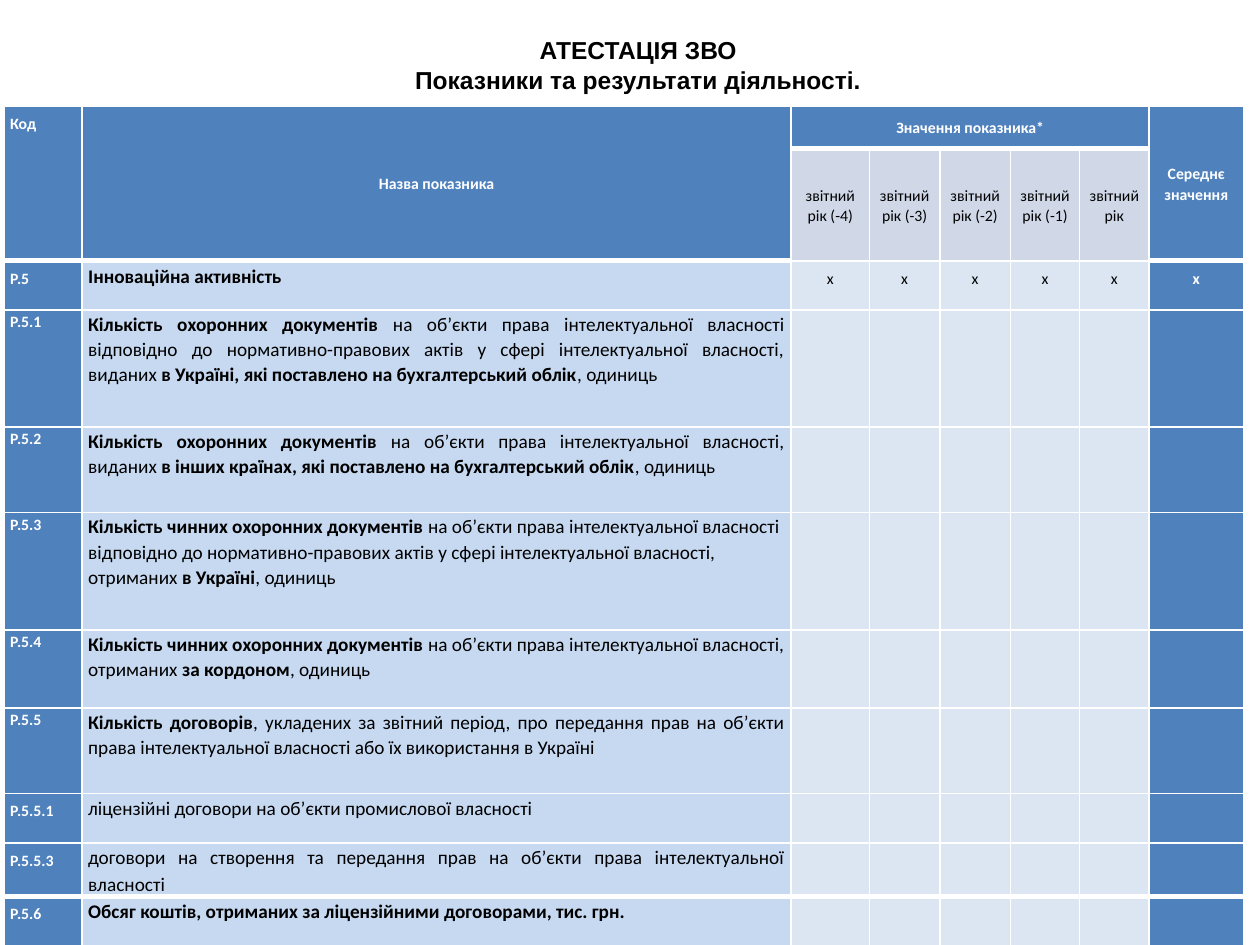
from lxml.etree import SubElement
from pptx import Presentation
from pptx.dml.color import RGBColor
from pptx.enum.shapes import MSO_SHAPE
from pptx.enum.text import MSO_ANCHOR, PP_ALIGN
from pptx.oxml.ns import qn
from pptx.util import Inches, Pt

WHITE = RGBColor(0xFF, 0xFF, 0xFF)
BLACK = RGBColor(0, 0, 0)
BLUE = RGBColor(0x4F, 0x81, 0xBD)
YEAR_FILL = RGBColor(0xD0, 0xD8, 0xE8)
NAME_FILL = RGBColor(0xC6, 0xD9, 0xF1)
VALUE_FILL = RGBColor(0xDC, 0xE6, 0xF2)

LEFT, CENTER, JUSTIFY = PP_ALIGN.LEFT, PP_ALIGN.CENTER, PP_ALIGN.JUSTIFY
FIXED, LOOSE = Pt(15), 1.06

TITLE_LINES = ["АТЕСТАЦІЯ ЗВО", "Показники та результати діяльності."]
COLUMN_WIDTHS = [0.62, 5.63, 0.62, 0.56, 0.56, 0.55, 0.55, 0.75]
ROW_HEIGHTS = [0.34, 0.89, 0.39, 0.93, 0.68, 0.93, 0.62, 0.68, 0.39, 0.39, 0.39]
YEARS = ["звітний рік (-4)", "звітний рік (-3)", "звітний рік (-2)",
         "звітний рік (-1)", "звітний рік"]
AVERAGE_COLUMN = 7
FIRST_INDICATOR_ROW = 2

# Code, name (bold between **), value mark, name alignment, line spacing
INDICATORS = [
    ("Р.5", "**Інноваційна активність**", "х", LEFT, FIXED),
    ("Р.5.1", "**Кількість охоронних документів **на об’єкти права інтелектуальної "
     "власності відповідно до нормативно-правових актів у сфері інтелектуальної "
     "власності, виданих **в Україні, які поставлено на бухгалтерський облік**, одиниць",
     "", JUSTIFY, LOOSE),
    ("Р.5.2", "**Кількість охоронних документів** на об’єкти права інтелектуальної "
     "власності, виданих **в інших країнах, які поставлено на бухгалтерський облік**, "
     "одиниць", "", JUSTIFY, LOOSE),
    ("Р.5.3", "**Кількість чинних охоронних документів **на об’єкти права "
     "інтелектуальної власності відповідно до нормативно-правових актів у сфері "
     "інтелектуальної власності, отриманих **в Україні**, одиниць", "", LEFT, LOOSE),
    ("Р.5.4", "**Кількість чинних охоронних документів **на об’єкти права "
     "інтелектуальної власності, отриманих **за кордоном**, одиниць", "", LEFT, LOOSE),
    ("Р.5.5", "**Кількість договорів**, укладених за звітний період, про передання прав "
     "на об’єкти права інтелектуальної власності або їх використання в Україні",
     "", JUSTIFY, LOOSE),
    ("Р.5.5.1", "ліцензійні договори на об’єкти промислової власності",
     "", JUSTIFY, FIXED),
    ("Р.5.5.3", "договори на створення та передання прав на об’єкти права "
     "інтелектуальної власності", "", JUSTIFY, FIXED),
    ("Р.5.6", "**Обсяг коштів, отриманих за ліцензійними договорами, тис. грн.**",
     "", JUSTIFY, FIXED),
]

HEADER = {"size": 9, "color": WHITE, "bold": True}
YEAR = {"size": 9, "color": BLACK, "bold": False}
NAME = {"size": 11, "color": BLACK, "bold": False}


def add_run(paragraph, text, size, color, bold, name="Calibri"):
    run = paragraph.add_run()
    run.text = text
    run.font.color.rgb = color
    for attribute, value in {"size": Pt(size), "bold": bold, "name": name}.items():
        setattr(run.font, attribute, value)


def set_borders(cell, **widths):
    """Draw white borders of 1 pt, except for the sides given in widths."""
    properties = cell._tc.get_or_add_tcPr()
    for side in "LRTB":
        width = Pt(widths.get(side, 1))
        line = SubElement(properties, qn(f"a:ln{side}"), w=str(int(width)))
        fill = SubElement(line, qn("a:solidFill"))
        SubElement(fill, qn("a:srgbClr"), val=str(WHITE))


def fill_cell(cell, color):
    cell.fill.solid()
    cell.fill.fore_color.rgb = color
    margins = {"margin_left": 0.05, "margin_top": 0.01, "margin_right": 0.05,
               "margin_bottom": 0}
    for attribute, value in margins.items():
        setattr(cell, attribute, Inches(value))


def write_cell(cell, text, style, alignment=LEFT, spacing=LOOSE, anchor=MSO_ANCHOR.TOP):
    """Write text in which the parts between ** are bold."""
    cell.vertical_anchor = anchor
    paragraph = cell.text_frame.paragraphs[0]
    paragraph.alignment = alignment
    paragraph.line_spacing = spacing
    for index, part in enumerate(text.split("**")):
        if part:
            add_run(paragraph, part, **{**style, "bold": style["bold"] or index % 2 == 1})


def add_title(slide, left, top, width, height):
    shape = slide.shapes.add_shape(MSO_SHAPE.RECTANGLE, left, top, width, height)
    shape.shadow.inherit = False
    shape.fill.solid()
    shape.fill.fore_color.rgb = WHITE
    shape.line.fill.background()
    frame = shape.text_frame
    settings = {"word_wrap": True, "vertical_anchor": MSO_ANCHOR.TOP,
                "margin_top": Inches(0.07)}
    for attribute, value in settings.items():
        setattr(frame, attribute, value)
    for index, line in enumerate(TITLE_LINES):
        paragraph = frame.add_paragraph() if index else frame.paragraphs[0]
        paragraph.alignment = CENTER
        paragraph._p.get_or_add_pPr().set("indent", str(Inches(0.51)))
        add_run(paragraph, line, 14, BLACK, True, "Arial")


def write_header(table):
    middle = {"alignment": CENTER, "anchor": MSO_ANCHOR.MIDDLE}
    for column in (0, 1, AVERAGE_COLUMN):
        table.cell(0, column).merge(table.cell(1, column))
    table.cell(0, 2).merge(table.cell(0, AVERAGE_COLUMN - 1))
    write_cell(table.cell(0, 0), "Код", HEADER, spacing=FIXED)
    for column, text in {1: "Назва показника", 2: "Значення показника*",
                         AVERAGE_COLUMN: "Середнє значення"}.items():
        write_cell(table.cell(0, column), text, HEADER, **middle)
    for column, text in enumerate(YEARS, start=2):
        write_cell(table.cell(1, column), text, YEAR, **middle)


def write_indicators(table):
    for row, indicator in enumerate(INDICATORS, start=FIRST_INDICATOR_ROW):
        code, name, mark, alignment, spacing = indicator
        write_cell(table.cell(row, 0), code, HEADER, LEFT, spacing)
        write_cell(table.cell(row, 1), name, NAME, alignment, spacing)
        if mark:
            for column in range(2, AVERAGE_COLUMN + 1):
                style = HEADER if column == AVERAGE_COLUMN else YEAR
                write_cell(table.cell(row, column), mark, style, CENTER, spacing)


def format_cells(table):
    last_row = len(ROW_HEIGHTS) - 1
    for row in range(len(ROW_HEIGHTS)):
        for column in range(len(COLUMN_WIDTHS)):
            is_value = 2 <= column < AVERAGE_COLUMN
            widths = {}
            if row == (0 if is_value else 1):
                widths["B"] = 3
            elif row == (1 if is_value else 2) or row == last_row:
                widths["T"] = 3
            if row == last_row - 1:
                widths["B"] = 3
            if row == 0 or column in (0, AVERAGE_COLUMN):
                color = BLUE
            elif column == 1:
                color = BLUE if row == 1 else NAME_FILL
            else:
                color = YEAR_FILL if row == 1 else VALUE_FILL
            cell = table.cell(row, column)
            set_borders(cell, **widths)
            fill_cell(cell, color)


def add_indicator_table(slide, left, top, width, height):
    table = slide.shapes.add_table(len(ROW_HEIGHTS), len(COLUMN_WIDTHS),
                                   left, top, width, height).table
    table.first_row = table.horz_banding = False
    for column, column_width in zip(table.columns, COLUMN_WIDTHS):
        column.width = Inches(column_width)
    for row, row_height in zip(table.rows, ROW_HEIGHTS):
        row.height = Inches(row_height)
    write_header(table)
    write_indicators(table)
    format_cells(table)


def main():
    presentation = Presentation()
    presentation.slide_width, presentation.slide_height = Inches(10), Inches(7.5)
    slide = presentation.slides.add_slide(presentation.slide_layouts[6])
    add_title(slide, Inches(0.28), Inches(0.21), Inches(9.06), Inches(0.88))
    add_indicator_table(slide, Inches(0.03), Inches(0.84), Inches(9.84), Inches(6.63))
    presentation.save("out.pptx")


if __name__ == "__main__":
    main()
